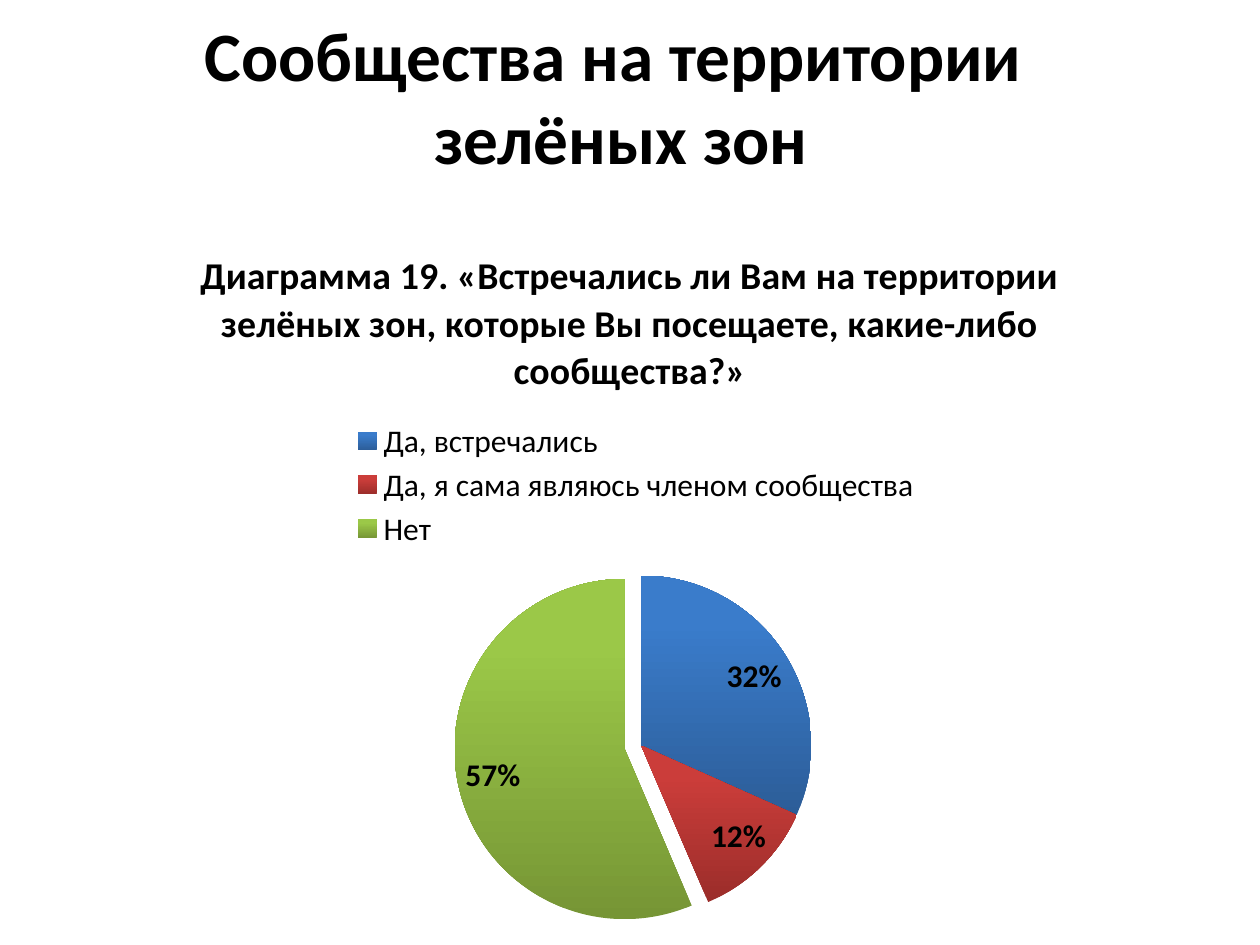
from dataclasses import dataclass

from lxml import etree
from pptx import Presentation, util as u
from pptx.chart.data import CategoryChartData
from pptx.dml.color import RGBColor
from pptx.enum import chart as ch, text as tx
from pptx.oxml import parse_xml
from pptx.oxml.ns import nsdecls, qn


@dataclass(frozen=True)
class Theme:
    font: str = "Calibri"
    ink: str = "000000"
    head: float = 39.6
    title: float = 21.6
    body: float = 18


@dataclass(frozen=True)
class Slice:
    name: str
    share: int
    dark: str
    light: str
    burst: int = 0


THEME = Theme()
SLICES = [
    Slice("Да, встречались", 32, "2C5D98", "3A7CCB"),
    Slice("Да, я сама являюсь членом сообщества", 12, "9B2D2A", "CB3D3A"),
    Slice("Нет", 57, "769535", "9BC848", burst=10),
]
HEAD = "Сообщества на территории \vзелёных зон"
ASK = ("Диаграмма 19. «Встречались ли Вам на территории зелёных зон, "
       "которые Вы посещаете, какие-либо сообщества?»")


def style(font, size: float, bold: bool = False) -> None:
    font.name, font.size, font.bold = THEME.font, u.Pt(size), bold
    font.color.rgb = RGBColor.from_string(THEME.ink)


def layout(inner: bool, x: float, y: float, w: float, h: float):
    """Return a manual chart layout, in fractions of the chart area."""
    target = '<c:layoutTarget val="inner"/>' if inner else ""
    return parse_xml(
        f'<c:layout {nsdecls("c")}><c:manualLayout>{target}'
        '<c:xMode val="edge"/><c:yMode val="edge"/>'
        f'<c:x val="{x}"/><c:y val="{y}"/><c:w val="{w}"/><c:h val="{h}"/>'
        '</c:manualLayout></c:layout>')


def paint(point, part: Slice) -> None:
    """Shade a slice from dark at the foot to light, and pull it out."""
    fill = point.format.fill
    fill.gradient()
    fill.gradient_angle = 90
    for stop, hue, pos in zip(fill.gradient_stops, (part.dark, part.light), (0, 0.8)):
        stop.color.rgb = RGBColor.from_string(hue)
        stop.position = pos
    point.format.line.fill.background()
    if part.burst:
        props = point.format.fill._xPr
        burst = etree.Element(qn("c:explosion"), val=str(part.burst))
        props.addprevious(burst)


def add_head(slide) -> None:
    head = slide.shapes.title
    head.left, head.top = u.Inches(0.43), u.Inches(0.13)
    head.width, head.height = u.Inches(9), u.Inches(1.25)
    frame = head.text_frame
    frame.text = HEAD
    frame.vertical_anchor = tx.MSO_ANCHOR.MIDDLE
    frame.auto_size = tx.MSO_AUTO_SIZE.NONE
    para = frame.paragraphs[0]
    para.alignment = tx.PP_ALIGN.CENTER
    for run in para.runs:
        style(run.font, THEME.head, True)


def add_pie(slide) -> None:
    data = CategoryChartData()
    data.categories = [part.name for part in SLICES]
    data.add_series("Series 1", [part.share for part in SLICES])
    pie = slide.shapes.add_chart(
        ch.XL_CHART_TYPE.PIE, u.Inches(0.5), u.Inches(1.75),
        u.Inches(9), u.Inches(5.75), data).chart
    style(pie.font, THEME.body)

    pie.has_title = True
    frame = pie.chart_title.text_frame
    frame.text = ASK
    style(frame.paragraphs[0].runs[0].font, THEME.title, True)

    pie.has_legend = True
    key = pie.legend
    key.position = ch.XL_LEGEND_POSITION.TOP
    key.include_in_layout = False
    style(key.font, THEME.body)
    for old in key._element.findall(qn("c:layout")):
        key._element.remove(old)
    key._element.find(qn("c:legendPos")).addnext(layout(False, 0.25, 0.27, 0.51, 0.19))

    plot = pie.plots[0]
    plot.vary_by_categories = True
    area = plot._element.getparent()
    for old in area.findall(qn("c:layout")):
        area.remove(old)
    area.insert(0, layout(True, 0.36, 0.49, 0.3, 0.47))

    # The rounded shares add up to 101, so they are shown as values.
    plot.has_data_labels = True
    tags = plot.data_labels
    tags.show_percentage, tags.show_value = False, True
    tags.number_format, tags.number_format_is_linked = '0"%"', False
    tags.position = ch.XL_LABEL_POSITION.BEST_FIT
    style(tags.font, THEME.body, True)
    for i, part in enumerate(SLICES):
        paint(plot.series[0].points[i], part)


def main() -> None:
    deck = Presentation()
    deck.slide_width, deck.slide_height = u.Inches(10), u.Inches(7.5)
    slide = deck.slides.add_slide(deck.slide_layouts[5])
    add_head(slide)
    add_pie(slide)
    deck.save("out.pptx")


if __name__ == "__main__":
    main()
